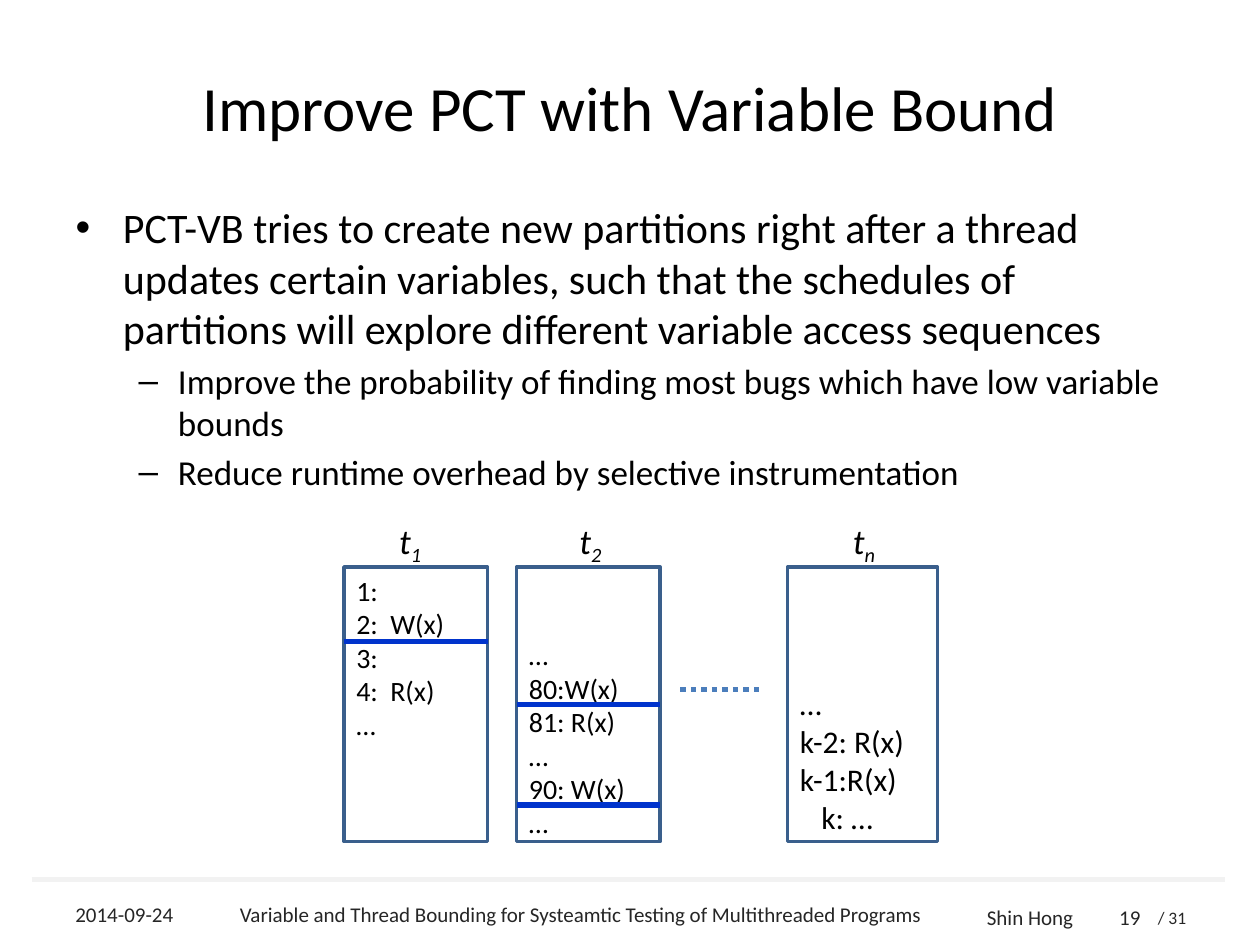
from lxml import etree
from pptx import Presentation, util as u
from pptx.dml import color
from pptx.enum import dml, shapes, text
from pptx.oxml import ns

PX = 9144
FONT = "Calibri"
COLORS = {
    "text": "000000",
    "footer": "262626",
    "rule": "F2F2F2",
    "border": "3A5F8C",
    "dots": "4B7EBC",
    "cut": "0033CC",
}
ALIGN = text.PP_ALIGN
ANCHOR = text.MSO_ANCHOR


def px(*values):
    return [u.Emu(value * PX) for value in values]


def rgb(name):
    return color.RGBColor.from_string(COLORS[name])


def add_run(paragraph, content, size=12, ink="text", italic=None, baseline=None):
    run = paragraph.add_run()
    run.text = content
    run.font.name = FONT
    run.font.size = u.Pt(size)
    run.font.color.rgb = rgb(ink)
    run.font.italic = italic
    if baseline is not None:
        run.font._element.set("baseline", str(baseline * 1000))
    return run


def write_lines(frame, lines, align=None, levels=None, sizes=None, **style):
    for index, line in enumerate(lines):
        paragraph = frame.paragraphs[0] if index == 0 else frame.add_paragraph()
        paragraph.alignment = align
        if levels:
            paragraph.level = levels[index]
        if sizes:
            style["size"] = sizes[index]
        add_run(paragraph, line, **style)


def set_tab(paragraph, position):
    properties = paragraph._p.get_or_add_pPr()
    tabs = etree.SubElement(properties, ns.qn("a:tabLst"))
    etree.SubElement(tabs, ns.qn("a:tab"), pos=str(position * PX), algn="l")


class SlideBuilder:
    def __init__(self, presentation):
        self.slide = presentation.slides.add_slide(presentation.slide_layouts[1])

    def placeholder(self, index, box, lines, anchor, **style):
        shape = self.slide.placeholders[index]
        shape.left, shape.top, shape.width, shape.height = px(*box)
        frame = shape.text_frame
        frame.auto_size = text.MSO_AUTO_SIZE.NONE
        frame.vertical_anchor = anchor
        write_lines(frame, lines, **style)

    def label(self, box, content, anchor=ANCHOR.MIDDLE, wrap=True, **style):
        frame = self.slide.shapes.add_textbox(*px(*box)).text_frame
        frame.word_wrap = wrap
        frame.vertical_anchor = anchor
        write_lines(frame, [content], **style)
        return frame.paragraphs[0]

    def thread(self, left, width, subscript, label_left, lines, anchor, size, bottom=5):
        shape = self.slide.shapes.add_shape(
            shapes.MSO_SHAPE.RECTANGLE, *px(left, 450, width, 218))
        shape.shadow.inherit = False
        shape.fill.background()
        shape.line.color.rgb = rgb("border")
        shape.line.width = u.Pt(2)
        frame = shape.text_frame
        frame.vertical_anchor = anchor
        frame.margin_bottom = px(bottom)[0]
        write_lines(frame, lines, align=ALIGN.LEFT, size=size)
        name = self.label((label_left, 407, 39, 44), "t", ANCHOR.TOP, wrap=False,
                          size=20, italic=True)
        add_run(name, subscript, size=20, italic=True, baseline=-25)
        return shape

    def line(self, left, right, top, ink, dash=None):
        connector = self.slide.shapes.add_connector(
            shapes.MSO_CONNECTOR.STRAIGHT, *px(left, top, right, top))
        connector.line.color.rgb = rgb(ink)
        connector.line.width = u.Pt(3)
        if dash:
            connector.line.dash_style = dash
        etree.SubElement(connector._element.spPr, ns.qn("a:effectLst"))
        return connector


def main():
    presentation = Presentation()
    presentation.slide_width, presentation.slide_height = px(1000, 750)
    builder = SlideBuilder(presentation)

    builder.line(25, 972, 698, "rule")
    builder.placeholder(0, (50, 30, 900, 109), ["Improve PCT with Variable Bound"],
                        ANCHOR.MIDDLE, align=ALIGN.CENTER, size=36)
    builder.placeholder(1, (50, 155, 900, 244), [
        "PCT-VB tries to create new partitions right after a thread updates certain "
        "variables, such that the schedules of partitions will explore different "
        "variable access sequences",
        "Improve the probability of finding most bugs which have low variable bounds",
        "Reduce runtime overhead by selective instrumentation",
    ], ANCHOR.TOP, levels=[0, 1, 1], sizes=[24, 20, 20])

    footers = [
        ((50, 709, 104, 33), "2014-09-24", ALIGN.LEFT, 12),
        ((154, 709, 614, 33),
         "Variable and Thread Bounding for Systeamtic Testing of Multithreaded Programs",
         ALIGN.CENTER, 12),
        ((773, 715, 89, 26), "Shin Hong", ALIGN.CENTER, 12),
        ((868, 715, 47, 26), "19", ALIGN.RIGHT, 12),
        ((909, 715, 55, 27), "/ 31", ALIGN.LEFT, 10),
    ]
    for box, content, align, size in footers:
        builder.label(box, content, align=align, size=size, ink="footer")

    first = builder.thread(273, 114, "1", 307,
                           ["1:", "2:\tW(x)", "3:", "4:\tR(x)", "…"], ANCHOR.TOP, 16)
    for index in (1, 3):
        set_tab(first.text_frame.paragraphs[index], 27)
    second = builder.thread(410, 114, "2", 450,
                            ["…", "80:W(x)", "81: R(x)", "…", "90: W(x)", "…"],
                            ANCHOR.BOTTOM, 16, bottom=2)
    last = builder.thread(625, 119, "n", 667,
                          ["…", "k-2: R(x)", "k-1:R(x)", "k: …"], ANCHOR.BOTTOM, 18)
    last.text_frame.paragraphs[3]._p.get_or_add_pPr().set("marL", str(17 * PX))

    builder.line(540, 605, 547, "dots", dml.MSO_LINE.ROUND_DOT)
    builder.line(273, 387, 509, "cut")
    middle = builder.line(410, 524, 559, "cut")
    middle.begin_connect(second, 1)
    middle.end_connect(second, 3)
    builder.line(410, 524, 639, "cut")

    presentation.save("out.pptx")


if __name__ == "__main__":
    main()
